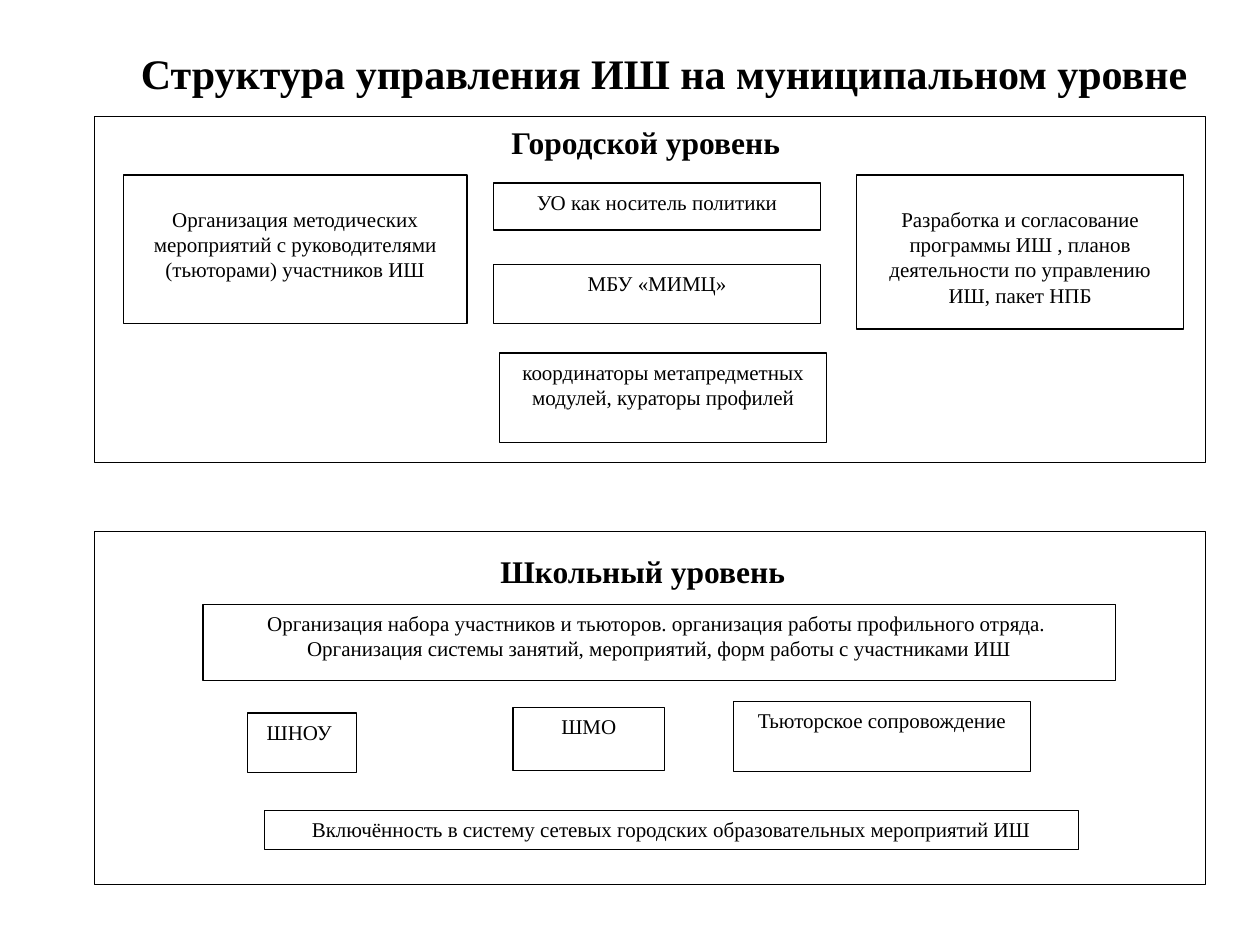
from dataclasses import dataclass

from pptx import Presentation
from pptx import util as u
from pptx.dml.color import RGBColor
from pptx.enum import shapes, text


@dataclass(frozen=True)
class Theme:
    font: str = "Times New Roman"
    ink: RGBColor = RGBColor(0, 0, 0)
    paper: RGBColor = RGBColor(255, 255, 255)
    title: float = 24
    heading: float = 18
    body: float = 12
    line: float = 0.75
    inset_x: float = 7.2
    inset_y: float = 3.6


def write(tf, content, *, theme, size, bold=False, anchor=text.MSO_ANCHOR.TOP,
          wrap=True, top=None):
    """Fill a text frame with centred paragraphs, one per line of content."""
    tf.word_wrap = wrap
    tf.vertical_anchor = anchor
    tf.margin_left = tf.margin_right = u.Pt(theme.inset_x)
    tf.margin_top = u.Pt(theme.inset_y if top is None else top)
    tf.margin_bottom = u.Pt(theme.inset_y)
    for i, line in enumerate(content.split("\n")):
        p = tf.add_paragraph() if i else tf.paragraphs[0]
        p.alignment = text.PP_ALIGN.CENTER
        r = p.add_run()
        r.text = line
        r.font.name = theme.font
        r.font.size = u.Pt(size)
        r.font.bold = bold
        r.font.color.rgb = theme.ink


class Board:
    def __init__(self, slide, theme):
        self.slide = slide
        self.theme = theme

    def panel(self, *rect):
        sp = self.slide.shapes.add_shape(
            shapes.MSO_SHAPE.RECTANGLE, *map(u.Pt, rect))
        sp.shadow.inherit = False
        sp.fill.solid()
        sp.fill.fore_color.rgb = self.theme.paper
        sp.line.color.rgb = self.theme.ink
        sp.line.width = u.Pt(self.theme.line)
        return sp

    def box(self, rect, content, **fmt):
        sp = self.panel(*rect)
        write(sp.text_frame, content, theme=self.theme,
              size=self.theme.body, **fmt)

    def label(self, rect, content, size, **fmt):
        sp = self.slide.shapes.add_textbox(*map(u.Pt, rect))
        write(sp.text_frame, content, theme=self.theme, size=size,
              bold=True, **fmt)


PANEL_X, PANEL_W = 54, 635
UNIT_W = 187   # bodies of the city level
LOWERED = 18   # top inset that starts the text one line lower

CITY_BOXES = [
    ((282, 104.5, UNIT_W, 27), "УО как носитель политики"),
    ((282, 151, UNIT_W, 34), "МБУ «МИМЦ»"),
    ((285.5, 201.75, UNIT_W, 51),
     "координаторы метапредметных модулей, кураторы профилей"),
]
CITY_TASKS = [
    ((70.5, 100, 196.5, 85),
     "Организация методических мероприятий с руководителями "
     "(тьюторами) участников ИШ"),
    ((489.5, 100, UNIT_W, 88),
     "Разработка и согласование программы ИШ , планов деятельности "
     "по управлению ИШ, пакет НПБ"),
]
SCHOOL_BOXES = [
    ((116, 345.5, 521.5, 43.5),
     "Организация набора участников и тьюторов. организация работы "
     "профильного отряда. \n"
     "Организация системы занятий, мероприятий, форм работы с участниками ИШ"),
    ((141.25, 407.5, 62.5, 34), "ШНОУ "),
    ((293.25, 404.25, 86.5, 36), "ШМО"),
    ((419, 401, 170, 39.75), "Тьюторское сопровождение"),
    ((151.25, 463, 465, 22.5),
     "Включённость в систему сетевых городских образовательных мероприятий ИШ"),
]


def main():
    prs = Presentation()
    prs.slide_width, prs.slide_height = u.Pt(720), u.Pt(540)
    theme = Theme()
    board = Board(prs.slides.add_slide(prs.slide_layouts[6]), theme)

    board.label((55.5, 16.5, 648, 50),
                "Структура управления ИШ на муниципальном уровне",
                theme.title, anchor=text.MSO_ANCHOR.MIDDLE)

    board.panel(PANEL_X, 66.75, PANEL_W, 197.5)
    board.label((247, 67, 244, 51), "Городской уровень", theme.heading)
    for rect, content in CITY_BOXES:
        board.box(rect, content)
    for rect, content in CITY_TASKS:
        board.box(rect, content, top=LOWERED)

    board.panel(PANEL_X, 303.75, PANEL_W, 201.75)
    board.label((278, 312, 178.5, 29), "Школьный уровень", theme.heading,
                wrap=False)
    for rect, content in SCHOOL_BOXES:
        board.box(rect, content)

    prs.save("out.pptx")


if __name__ == "__main__":
    main()
